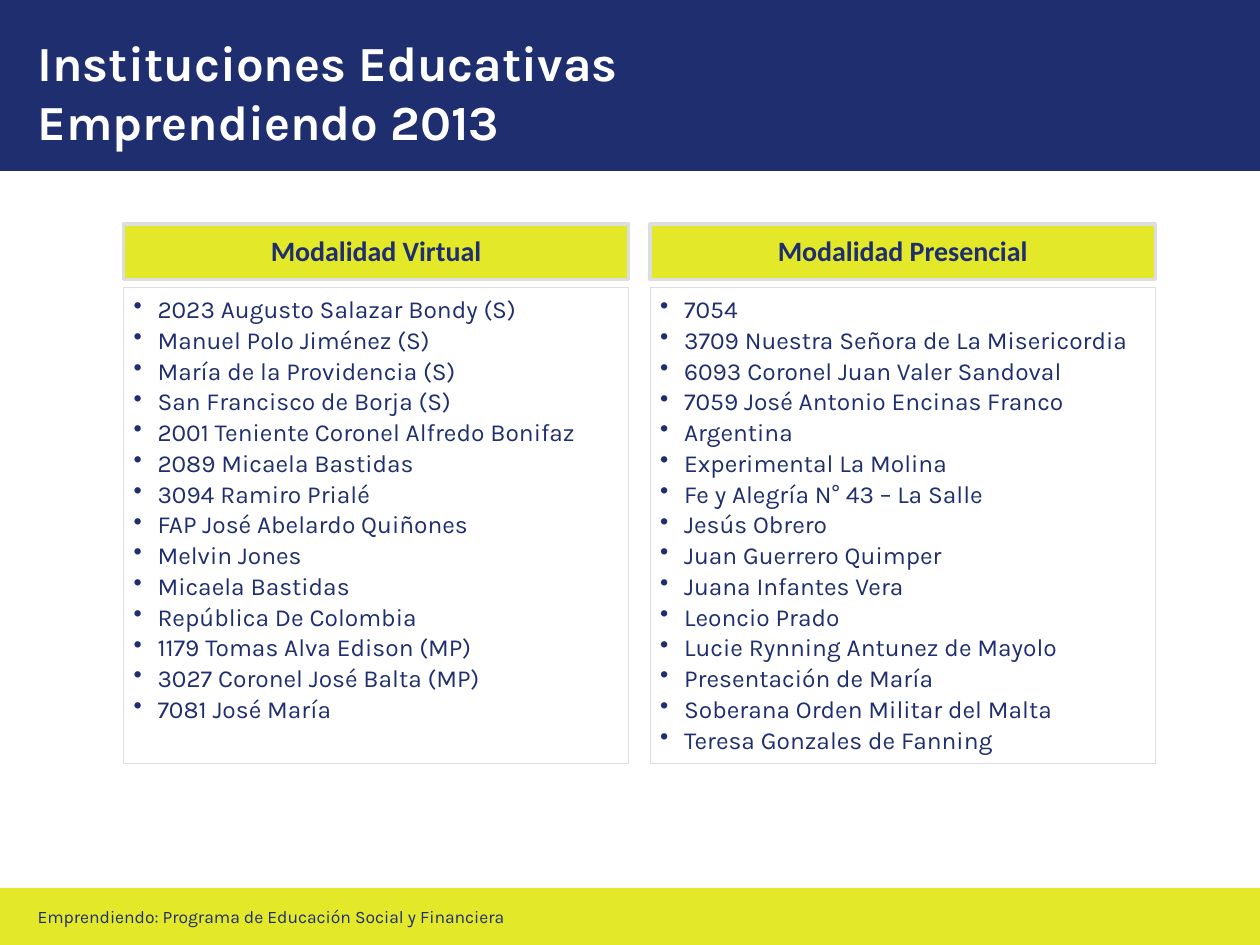
import pptx
import pptx.dml.color
import pptx.enum.shapes
import pptx.enum.text
import pptx.oxml.ns
import pptx.util
from lxml import etree

Inches, Pt = pptx.util.Inches, pptx.util.Pt
RGBColor = pptx.dml.color.RGBColor
Align, Anchor = pptx.enum.text.PP_ALIGN, pptx.enum.text.MSO_ANCHOR
qn = pptx.oxml.ns.qn

# Content
TITLE = ["Instituciones Educativas", "Emprendiendo 2013"]
FOOTER = ["Emprendiendo: Programa de Educación Social y Financiera"]
MODALITIES = [
    ("Modalidad Virtual", [
        "2023 Augusto Salazar Bondy (S)",
        "Manuel Polo Jiménez (S)",
        "María de la Providencia (S)",
        "San Francisco de Borja (S)",
        "2001 Teniente Coronel Alfredo Bonifaz",
        "2089 Micaela Bastidas",
        "3094 Ramiro Prialé",
        "FAP José Abelardo Quiñones",
        "Melvin Jones",
        "Micaela Bastidas",
        "República De Colombia",
        "1179 Tomas Alva Edison (MP)",
        "3027 Coronel José Balta (MP)",
        "7081 José María",
    ]),
    ("Modalidad Presencial", [
        "7054",
        "3709 Nuestra Señora de La Misericordia",
        "6093 Coronel Juan Valer Sandoval",
        "7059 José Antonio Encinas Franco",
        "Argentina",
        "Experimental La Molina",
        "Fe y Alegría N° 43 – La Salle",
        "Jesús Obrero",
        "Juan Guerrero Quimper",
        "Juana Infantes Vera",
        "Leoncio Prado",
        "Lucie Rynning Antunez de Mayolo",
        "Presentación de María",
        "Soberana Orden Militar del Malta",
        "Teresa Gonzales de Fanning",
    ]),
]

# Colours and layout, in inches
NAVY = RGBColor(0x1E, 0x2E, 0x6E)
LIME = RGBColor(0xE3, 0xE8, 0x29)
GREY = RGBColor(0xDC, 0xDD, 0xDE)
WHITE = RGBColor(0xFF, 0xFF, 0xFF)
WIDTH, HEIGHT = 10, 7.5
TITLE_BAND, FOOTER_BAND = 1.34, 0.44
COLUMN_LEFT, COLUMN_WIDTH, COLUMN_GAP = 0.98, 4.01, 0.17
HEADING_TOP, HEADING_HEIGHT = 1.78, 0.44
LIST_TOP, LIST_HEIGHT = 2.28, 3.78
BULLET_INDENT = 0.19

prs = pptx.Presentation()
prs.slide_width, prs.slide_height = Inches(WIDTH), Inches(HEIGHT)
slide = prs.slides.add_slide(prs.slide_layouts[6])


def add_rect(left, top, width, height, fill, line, line_width):
    rect = slide.shapes.add_shape(
        pptx.enum.shapes.MSO_SHAPE.RECTANGLE,
        Inches(left), Inches(top), Inches(width), Inches(height))
    rect.shadow.inherit = False
    if fill is None:
        rect.fill.background()
    else:
        rect.fill.solid()
        rect.fill.fore_color.rgb = fill
    rect.line.color.rgb = line
    rect.line.width = Pt(line_width)
    return rect


def add_label(left, top, width, height):
    return slide.shapes.add_textbox(
        Inches(left), Inches(top), Inches(width), Inches(height))


def write(shape, lines, font, size, color, bold=False, align=Align.LEFT,
          anchor=Anchor.TOP, insets=None, wrap=True, spacing=None, bullets=False):
    frame = shape.text_frame
    frame.word_wrap = wrap
    frame.vertical_anchor = anchor
    if insets:
        (frame.margin_left, frame.margin_top,
         frame.margin_right, frame.margin_bottom) = map(Inches, insets)
    frame.text = "\n".join(lines)
    for paragraph in frame.paragraphs:
        paragraph.alignment = align
        if spacing:
            paragraph.line_spacing = spacing
        if bullets:
            paragraph.level = 1
            paragraph.space_after = Pt(2.45)
            properties = paragraph._p.get_or_add_pPr()
            properties.set("marL", str(Inches(BULLET_INDENT)))
            properties.set("indent", str(-Inches(BULLET_INDENT)))
            etree.SubElement(properties, qn("a:buChar")).set("char", "•")
        for run in paragraph.runs:
            run.font.name, run.font.size = font, Pt(size)
            run.font.bold = bold
            run.font.color.rgb = color


# Footer and title bands
add_rect(0, HEIGHT - FOOTER_BAND, WIDTH, FOOTER_BAND, LIME, LIME, 2)
add_rect(0, 0, WIDTH, TITLE_BAND, NAVY, NAVY, 2)
write(add_label(0.2, 7.14, 3.99, 0.27), FOOTER, "Karla", 10, NAVY, wrap=False)

# One heading and one bulleted list for each modality
for column, (heading, schools) in enumerate(MODALITIES):
    left = COLUMN_LEFT + column * (COLUMN_WIDTH + COLUMN_GAP)
    heading_box = add_rect(left, HEADING_TOP, COLUMN_WIDTH, HEADING_HEIGHT,
                           LIME, GREY, 2)
    write(heading_box, [heading], "Calibri", 16, NAVY, bold=True,
          align=Align.CENTER, anchor=Anchor.MIDDLE,
          insets=(0.12, 0.07, 0.12, 0.07), spacing=0.9)
    school_box = add_rect(left, LIST_TOP, COLUMN_WIDTH, LIST_HEIGHT,
                          None, GREY, 0.25)
    write(school_box, schools, "Karla", 14, NAVY,
          insets=(0.08, 0.08, 0.11, 0.12), spacing=0.9, bullets=True)

# Title
write(add_label(0.2, 0.21, 7.95, 1.04), TITLE, "Karla", 28, WHITE, bold=True)

prs.save("out.pptx")
